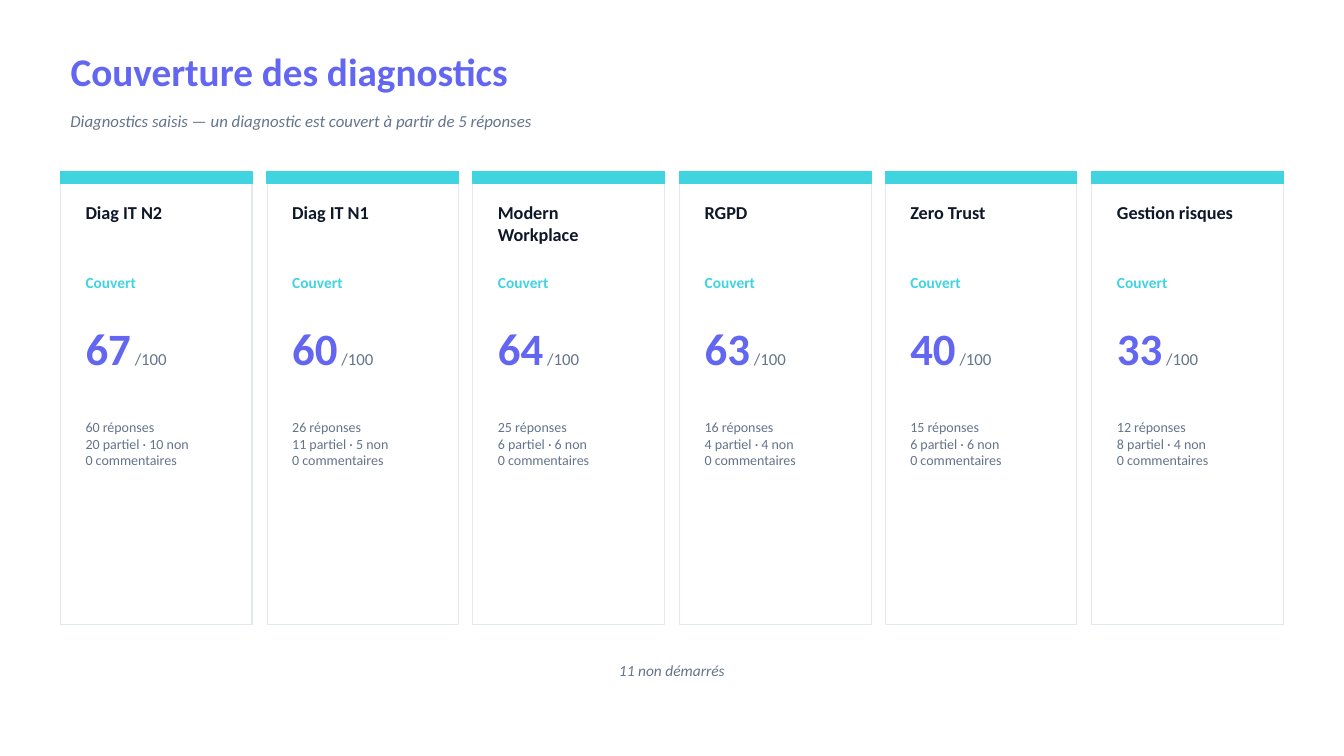
from dataclasses import dataclass

from pptx import Presentation
from pptx.dml.color import RGBColor
from pptx.enum.shapes import MSO_SHAPE
from pptx.enum.text import MSO_ANCHOR, MSO_AUTO_SIZE, PP_ALIGN
from pptx.util import Emu, Pt

EMU_PER_PX = 9144


@dataclass(frozen=True)
class Theme:
    font: str = "Calibri"
    accent: str = "6366F1"
    covered: str = "3FD4E0"
    ink: str = "0F172A"
    muted: str = "64748B"
    border: str = "E2E8F0"
    surface: str = "FFFFFF"
    title_size: int = 28
    score_size: int = 32
    name_size: int = 13
    body_size: int = 12
    label_size: int = 11
    detail_size: int = 10


@dataclass(frozen=True)
class Run:
    text: str
    size: int
    color: str
    bold: bool = False
    italic: bool = False


class SlideBuilder:
    def __init__(self, presentation, theme):
        self.theme = theme
        self.slide = presentation.slides.add_slide(presentation.slide_layouts[5])

    def box(self, left, top, width, height):
        return [Emu(px * EMU_PER_PX) for px in (left, top, width, height)]

    def fill_text(self, shape, paragraphs, anchor, align):
        frame = shape.text_frame
        frame.word_wrap = True
        frame.auto_size = MSO_AUTO_SIZE.NONE
        frame.vertical_anchor = anchor
        for index, runs in enumerate(paragraphs):
            paragraph = frame.add_paragraph() if index else frame.paragraphs[0]
            paragraph.alignment = align
            for item in runs:
                run = paragraph.add_run()
                run.text = item.text
                run.font.name = self.theme.font
                run.font.size = Pt(item.size)
                run.font.bold = item.bold
                run.font.italic = item.italic
                run.font.color.rgb = RGBColor.from_string(item.color)

    def title(self, bounds, run):
        shape = self.slide.shapes.title
        shape.left, shape.top, shape.width, shape.height = self.box(*bounds)
        self.fill_text(shape, [[run]], MSO_ANCHOR.MIDDLE, PP_ALIGN.LEFT)

    def text(self, bounds, paragraphs, anchor=MSO_ANCHOR.MIDDLE, align=PP_ALIGN.LEFT):
        shape = self.slide.shapes.add_textbox(*self.box(*bounds))
        self.fill_text(shape, paragraphs, anchor, align)

    def rectangle(self, bounds, fill, line, line_width):
        shape = self.slide.shapes.add_shape(MSO_SHAPE.RECTANGLE, *self.box(*bounds))
        shape.shadow.inherit = False
        shape.fill.solid()
        shape.fill.fore_color.rgb = RGBColor.from_string(fill)
        shape.line.color.rgb = RGBColor.from_string(line)
        shape.line.width = Pt(line_width)

    def card(self, left, width, name, score, details):
        theme = self.theme
        inner_left, inner_width = left + 15, width - 30
        self.rectangle((left, 170, width, 450), theme.surface, theme.border, 0.75)
        self.rectangle((left, 170, width, 12), theme.covered, theme.covered, 1)
        self.text((inner_left, 195, inner_width, 70),
                  [[Run(name, theme.name_size, theme.ink, bold=True)]], MSO_ANCHOR.TOP)
        self.text((inner_left, 265, inner_width, 30),
                  [[Run("Couvert", theme.label_size, theme.covered, bold=True)]])
        self.text((inner_left, 310, inner_width, 70),
                  [[Run(str(score), theme.score_size, theme.accent, bold=True),
                    Run(" /100", theme.body_size, theme.muted)]])
        self.text((inner_left, 410, inner_width, 190),
                  [[Run(line, theme.detail_size, theme.muted)] for line in details],
                  MSO_ANCHOR.TOP)


DIAGNOSTICS = [
    ("Diag IT N2", 67, 60, 20, 10),
    ("Diag IT N1", 60, 26, 11, 5),
    ("Modern Workplace", 64, 25, 6, 6),
    ("RGPD", 63, 16, 4, 4),
    ("Zero Trust", 40, 15, 6, 6),
    ("Gestion risques", 33, 12, 8, 4),
]


def main():
    presentation = Presentation()
    presentation.slide_width = Emu(1333 * EMU_PER_PX)
    presentation.slide_height = Emu(750 * EMU_PER_PX)
    theme = Theme()
    builder = SlideBuilder(presentation, theme)
    margin, content_width, card_width = 60, 1213, 190

    builder.title((margin, 40, 1200, 60),
                  Run("Couverture des diagnostics", theme.title_size, theme.accent, bold=True))
    builder.text((margin, 100, 1200, 40),
                 [[Run("Diagnostics saisis — un diagnostic est couvert à partir de 5 réponses",
                       theme.body_size, theme.muted, italic=True)]])

    pitch = (content_width - card_width) / (len(DIAGNOSTICS) - 1)
    for index, (name, score, answers, partial, negative) in enumerate(DIAGNOSTICS):
        details = [f"{answers} réponses", f"{partial} partiel · {negative} non", "0 commentaires"]
        builder.card(margin + round(index * pitch), card_width, name, score, details)

    builder.text((margin, 645, content_width, 40),
                 [[Run("11 non démarrés", theme.label_size, theme.muted, italic=True)]],
                 align=PP_ALIGN.CENTER)
    presentation.save("out.pptx")


if __name__ == "__main__":
    main()
